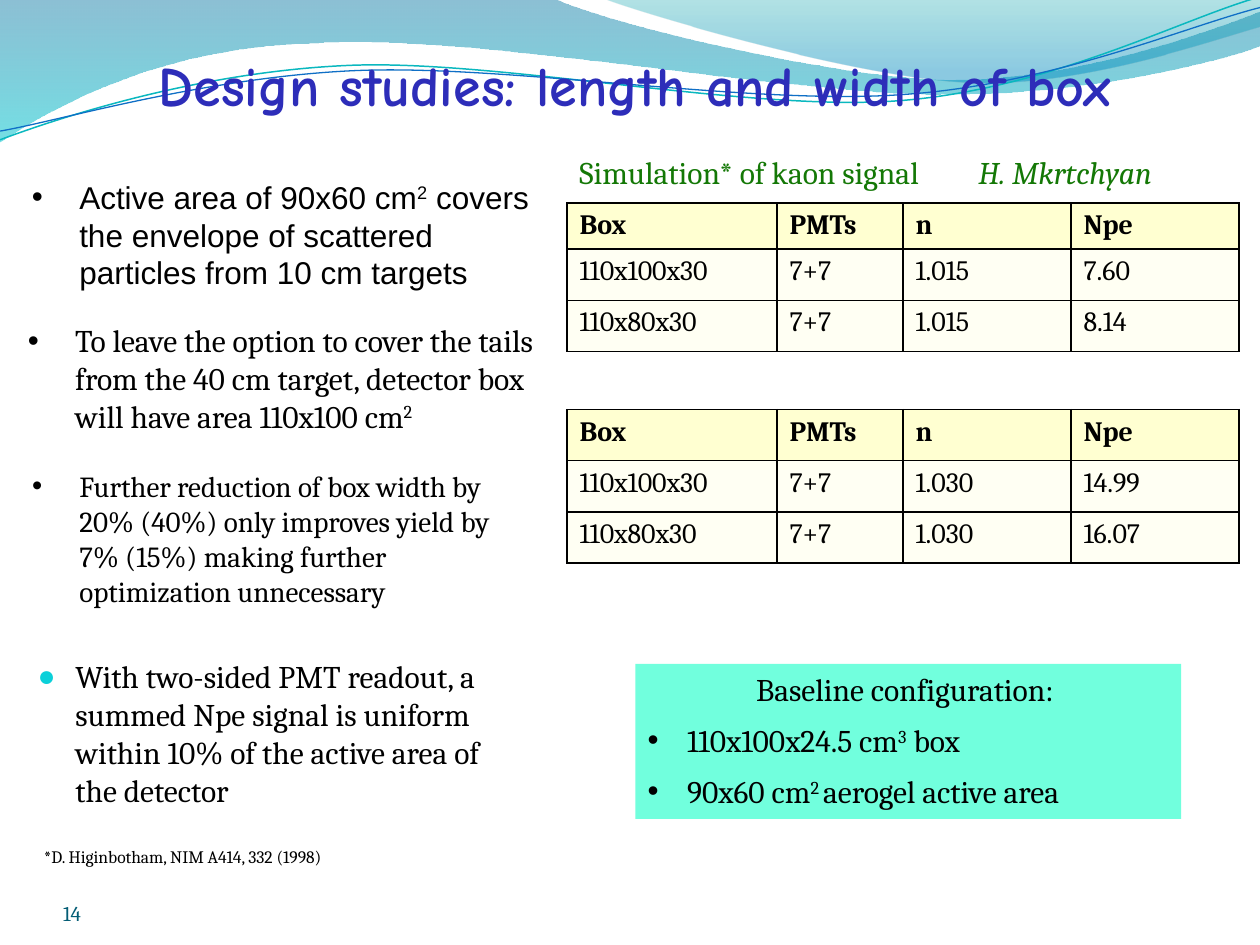
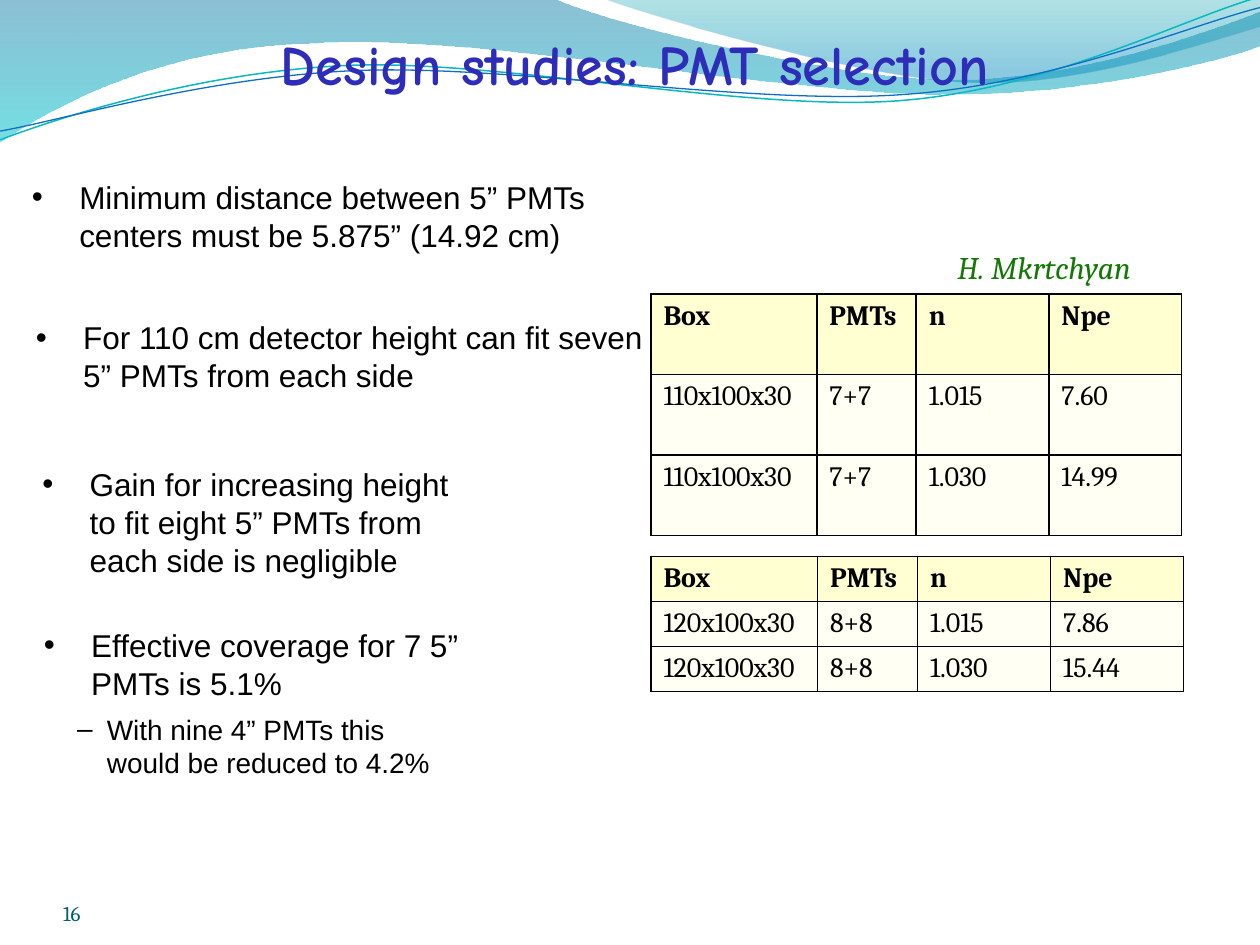
from dataclasses import dataclass

from lxml import etree
from pptx import Presentation
from pptx import util as u
from pptx.dml import color
from pptx.enum import shapes, text
from pptx.oxml import ns

Pt = u.Pt


@dataclass(frozen=True)
class Theme:
    title: str = "2D2DB9"
    ink: str = "000000"
    credit: str = "147806"
    number: str = "045D75"
    accent: str = "0BD0D9"
    callout: str = "71FFDD"
    head_fill: str = "FFFFD1"
    body_fill: str = "FFFFF3"
    serif: str = "Cambria"
    sans: str = "Arial"
    title_font: str = "Comic Neue"
    title_size: float = 32
    text_size: float = 18
    small_size: float = 16.6
    cell_size: float = 16
    number_size: float = 12
    note_size: float = 10


# Wave outlines: a pair is a line to a point, six numbers are a cubic curve
BANDS = [
    ([(0, 0), (316.8, -0.7), (342.7, 12.2, 478.1, 45.4, 545.8, 45.4),
      (614.2, 45.4, 689.8, 18.7, 720, 6.5), (720.7, 25.9),
      (707.8, 31.7, 626.4, 54.7, 537.1, 54), (447.8, 54, 275, 20.2, 185, 24.5),
      (92.9, 25.9, 33.1, 59.8, -0.7, 81.4), (0, 0)],
     [(0, "0074A1", 45), (1, "00C6CF", 55)]),
    ([(344.9, -0.7), (366.5, 7.9, 491, 44.6, 553.7, 46.8),
      (616.3, 49.7, 691.9, 23, 720, 15.1), (720, 0), (344.9, -0.7)],
     [(0, "00A1A9", 30), (0.8, "008BBF", 45)]),
]
LINES = [
    ([(0, 79.9), (34.6, 67, 113.8, 41, 199.4, 37.4),
      (284.4, 33.8, 427, 64.1, 513.4, 57.6),
      (599.8, 51.1, 675.4, 10.8, 718.6, -1.4)], "0AB8BF", 0.85),
    ([(0, 74.9), (33.8, 69.1, 118.1, 43.9, 203.8, 40.3),
      (290.2, 36.7, 429.8, 60.5, 516.2, 54),
      (601.9, 48.2, 677.5, 15.1, 720, 4.3)], "0F6FC6", 0.75),
]


def rgb(value):
    return color.RGBColor.from_string(value)


def sub(parent, tag, **attrs):
    return etree.SubElement(parent, ns.qn(tag), attrs)


class Deck:
    def __init__(self, theme):
        self.theme = theme
        self.prs = Presentation()
        self.prs.slide_width, self.prs.slide_height = Pt(720), Pt(540)
        self.layout = self.prs.slide_layouts[5]
        self.s = None

    # Slide frame: waves, title and number
    def slide(self, title, top, number):
        t = self.theme
        first = self.s is None
        self.s = self.prs.slides.add_slide(self.layout)
        if first:
            self.waves()
        sp = self.s.shapes.title
        sp.left, sp.top, sp.width, sp.height = Pt(30), Pt(top), Pt(666), Pt(60)
        tf = sp.text_frame
        tf.vertical_anchor = text.MSO_ANCHOR.MIDDLE
        tf.auto_size = text.MSO_AUTO_SIZE.NONE
        self.para(tf.paragraphs[0], title, size=t.title_size, font=t.title_font,
                  ink=t.title, bold=True, align=text.PP_ALIGN.CENTER)
        tf = self.text(36, 500.4, 168, 28.8, number, size=t.number_size,
                       ink=t.number)
        tf.vertical_anchor = text.MSO_ANCHOR.BOTTOM
        tf.margin_left = tf.margin_right = tf.margin_top = tf.margin_bottom = 0

    def waves(self):
        """Draw the waves and hand them to the shared layout."""
        drawn = []
        for outline, stops in BANDS:
            sp = self.freeform(outline, True)
            sp.fill.gradient()
            sp.fill.gradient_angle = 270
            for stop, (pos, value, _) in zip(sp.fill.gradient_stops, stops):
                stop.position = pos
                stop.color.rgb = rgb(value)
            for node, (_, _, alpha) in zip(sp.element.iter(ns.qn("a:srgbClr")), stops):
                sub(node, "a:alpha", val=str(alpha * 1000))
            sp.line.fill.background()
            drawn.append(sp)
        for outline, value, width in LINES:
            sp = self.freeform(outline, False)
            sp.fill.background()
            sp.line.color.rgb = rgb(value)
            sp.line.width = Pt(width)
            drawn.append(sp)
        for i, sp in enumerate(drawn):
            sp.element.nvSpPr.cNvPr.id = 100 + i
            self.layout.shapes.element.append(sp.element)

    def freeform(self, outline, close):
        points = [(Pt(seg[i]), Pt(seg[i + 1]))
                  for seg in outline for i in range(0, len(seg), 2)]
        builder = self.s.shapes.build_freeform(*points[0])
        builder.add_line_segments(points[1:], close=close)
        sp = builder.convert_to_shape()
        sp.shadow.inherit = False
        # Join each three control points into one cubic curve
        nodes = iter(list(sp.element.iter(ns.qn("a:lnTo"))))
        for seg in outline[1:]:
            node = next(nodes)
            if len(seg) == 6:
                node.tag_curve = None
                curve = etree.Element(ns.qn("a:cubicBezTo"))
                node.addprevious(curve)
                for ln in (node, next(nodes), next(nodes)):
                    curve.append(ln[0])
                    ln.getparent().remove(ln)
        return sp

    # Text: ^ marks the start and end of a superscript
    def para(self, p, words, size=None, font=None, ink=None, bold=False,
             italic=False, align=None, before=0, bullet=None, hang=27,
             left=None, bullet_ink=None):
        t = self.theme
        if align is not None:
            p.alignment = align
        p.space_before = Pt(before)
        if bullet:
            pPr = p._p.get_or_add_pPr()
            pPr.set("marL", str(Pt(left or hang)))
            pPr.set("indent", str(-Pt(hang)))
            sub(sub(pPr, "a:buClr"), "a:srgbClr", val=bullet_ink or t.ink)
            if bullet == "●":
                sub(pPr, "a:buSzPct", val="95000")
            sub(pPr, "a:buFont", typeface=t.sans)
            sub(pPr, "a:buChar", char=bullet)
        f = p.font
        f.size, f.name = Pt(size or t.text_size), font or t.serif
        f.bold, f.italic = bold, italic
        f.color.rgb = rgb(ink or t.ink)
        for i, part in enumerate(words.split("^")):
            if part:
                r = p.add_run()
                r.text = part
                if i % 2:
                    r._r.get_or_add_rPr().set("baseline", "30000")

    def text(self, x, y, w, h, words, **style):
        sp = self.s.shapes.add_textbox(Pt(x), Pt(y), Pt(w), Pt(h))
        tf = sp.text_frame
        tf.word_wrap = True
        self.para(tf.paragraphs[0], words, **style)
        return tf

    def label(self, x, y, w, h, words, **style):
        return self.text(x, y, w, h, words, before=7.5, **style)

    def bullet(self, x, y, w, h, words, **style):
        return self.text(x, y, w, h, words,
                         **{"before": 6, "bullet": "•", **style})

    def callout(self, x, y, w, h, heading, items):
        sp = self.s.shapes.add_shape(shapes.MSO_SHAPE.RECTANGLE,
                                     Pt(x), Pt(y), Pt(w), Pt(h))
        sp.shadow.inherit = False
        sp.fill.solid()
        sp.fill.fore_color.rgb = rgb(self.theme.callout)
        sp.line.fill.background()
        tf = sp.text_frame
        tf.word_wrap = True
        tf.vertical_anchor = text.MSO_ANCHOR.TOP
        self.para(tf.paragraphs[0], heading, before=7.5,
                  align=text.PP_ALIGN.CENTER)
        for item in items:
            self.para(tf.add_paragraph(), item, before=7.5, bullet="•",
                      hang=22.5, align=text.PP_ALIGN.LEFT)

    # Yield table with a heading row
    def table(self, x, y, cols, heights, rows, margin=3.6):
        t = self.theme
        rows = [("Box", "PMTs", "n", "Npe")] + rows
        tbl = self.s.shapes.add_table(len(rows), len(cols), Pt(x), Pt(y),
                                      Pt(sum(cols)), Pt(sum(heights))).table
        tbl.first_row = tbl.horz_banding = False
        for col, width in zip(tbl.columns, cols):
            col.width = Pt(width)
        for i, (row, height) in enumerate(zip(rows, heights)):
            tbl.rows[i].height = Pt(height)
            for j, words in enumerate(row):
                cell = tbl.cell(i, j)
                cell.margin_top = cell.margin_bottom = Pt(margin)
                tcPr = cell._tc.get_or_add_tcPr()
                for side in "LRTB":
                    ln = sub(tcPr, f"a:ln{side}", w=str(Pt(1)))
                    sub(sub(ln, "a:solidFill"), "a:srgbClr", val=t.ink)
                cell.fill.solid()
                cell.fill.fore_color.rgb = rgb(t.body_fill if i else t.head_fill)
                self.para(cell.text_frame.paragraphs[0], words,
                          size=t.cell_size, bold=i == 0)


def box_size_slide(d):
    t = d.theme
    d.slide("Design studies: length and width of box", 18, "14")
    # Arguments
    d.bullet(11.2, 98.1, 301, 75.6, "Active area of 90x60 cm^2^ covers the envelope "
             "of scattered particles from 10 cm targets", font=t.sans)
    d.bullet(8.9, 180, 321, 75.6, "To leave the option to cover the tails from the "
             "40 cm target, detector box will have area 110x100 cm^2^")
    d.bullet(11.3, 264.2, 288, 96, "Further reduction of box width by 20% (40%) only "
             "improves yield by 7% (15%) making further optimization unnecessary",
             size=t.small_size)
    d.bullet(14.4, 372, 288, 96, "With two-sided PMT readout, a summed Npe signal is "
             "uniform within 10% of the active area of the detector",
             bullet="●", bullet_ink=t.accent, hang=21.6, before=3.6)
    # Simulated yields
    d.label(324, 84, 222, 29, "Simulation* of kaon signal", ink=t.credit)
    d.label(552, 84, 156, 29, "H. Mkrtchyan", ink=t.credit, italic=True)
    cols = [120, 72, 96, 96]
    d.table(324, 116, cols, [26.4, 29.3, 29.3],
            [("110x100x30", "7+7", "1.015", "7.60"),
             ("110x80x30", "7+7", "1.015", "8.14")])
    d.table(324, 234, cols, [29.3] * 3,
            [("110x100x30", "7+7", "1.030", "14.99"),
             ("110x80x30", "7+7", "1.030", "16.07")])
    # Conclusion and reference
    d.callout(363, 379.4, 312, 88.6, "Baseline configuration: ",
              ["110x100x24.5 cm^3^ box", "90x60 cm^2 ^aerogel active area"])
    d.label(18, 480, 210, 19.4, "*D. Higinbotham, NIM A414, 332 (1998)",
            size=t.note_size)


def pmt_slide(d):
    t = d.theme
    d.slide("Design studies: PMT selection", 6, "16")
    # Simulated yields
    d.label(540, 138.2, 135.4, 29, "H. Mkrtchyan", ink=t.credit, italic=True)
    d.table(372, 168, [94.8, 56.8, 75.8, 75.8], [46] * 3,
            [("110x100x30", "7+7", "1.015", "7.60"),
             ("110x100x30", "7+7", "1.030", "14.99")])
    d.table(372, 318, [95.2, 57.1, 76.1, 76.1], [25.7] * 3,
            [("120x100x30", "8+8", "1.015", "7.86"),
             ("120x100x30", "8+8", "1.030", "15.44")], margin=3.2)
    # Arguments
    d.bullet(11.2, 98.1, 373, 61.2, "Minimum distance between 5” PMTs centers must be "
             "5.875” (14.92 cm)", font=t.sans)
    d.bullet(13.4, 178.4, 373, 61.2, "For 110 cm detector height can fit seven 5” PMTs "
             "from each side", font=t.sans)
    d.bullet(17.1, 262.3, 252.7, 80, "Gain for increasing height to fit eight 5” PMTs "
             "from each side is negligible", font=t.sans)
    tf = d.bullet(18, 354.2, 252.7, 126, "Effective coverage for 7 5” PMTs is 5.1%",
                  font=t.sans)
    d.para(tf.add_paragraph(), "With nine 4” PMTs this would be reduced to 4.2%",
           size=t.cell_size, font=t.sans, before=6, bullet="–", hang=17, left=36)


def main():
    d = Deck(Theme())
    box_size_slide(d)
    pmt_slide(d)
    d.prs.save("out.pptx")


if __name__ == "__main__":
    main()
